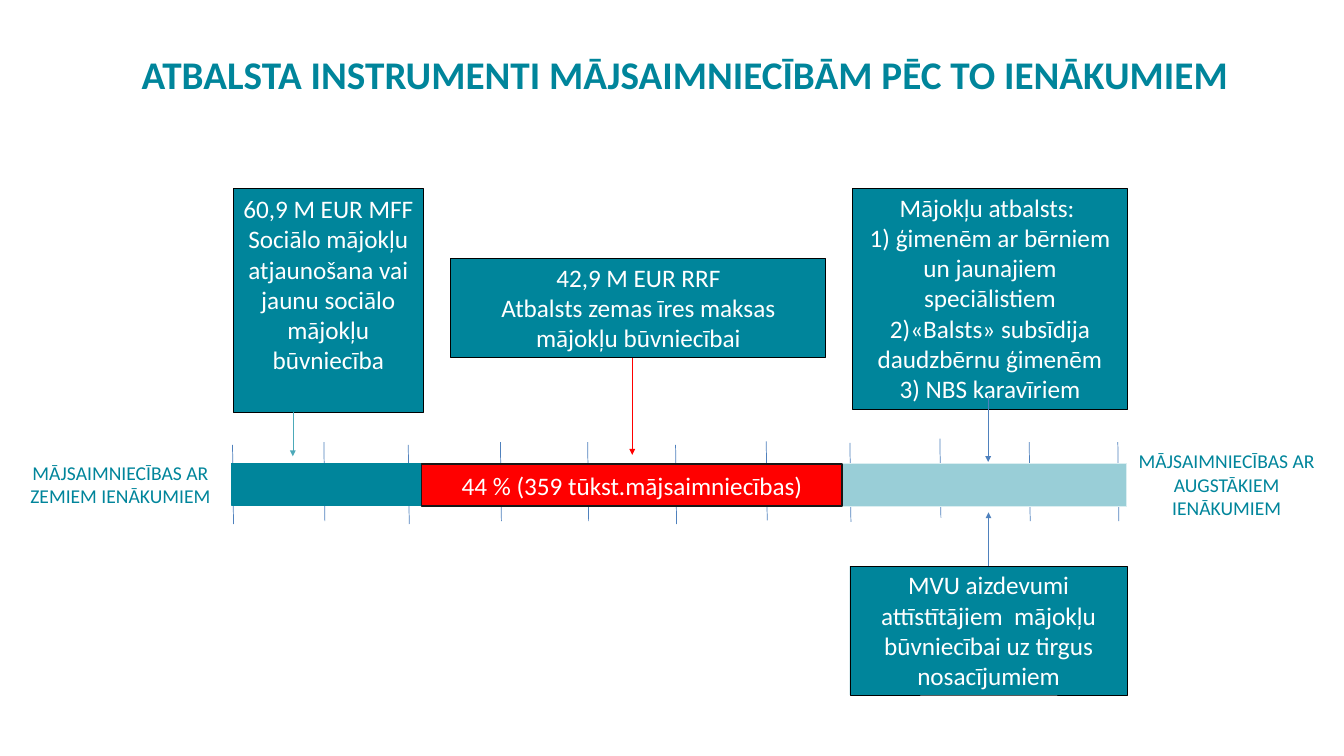
from dataclasses import dataclass
from typing import Any, NamedTuple, Optional

from lxml.etree import SubElement
from pptx import Presentation
from pptx.dml.color import RGBColor as RGB
from pptx.enum.shapes import MSO_CONNECTOR as CONN, MSO_SHAPE as SHAPE
from pptx.enum.text import MSO_ANCHOR as ANCHOR, PP_ALIGN as ALIGN
from pptx.oxml.ns import qn
from pptx.util import Pt


@dataclass(frozen=True)
class Theme:
    font: str = "Calibri"
    teal: str = "00859B"
    pale_teal: str = "99CED7"
    pale_edge: str = "DBEEF1"
    mid_teal: str = "4CA9B9"
    blue: str = "4F81BD"
    red: str = "FF0000"
    dark: str = "171717"
    black: str = "000000"
    white: str = "FFFFFF"
    title_size: float = 39.8
    label_size: float = 19.9
    box_size: float = 25.6


class Area(NamedTuple):
    x: float
    y: float
    w: float
    h: float


@dataclass(frozen=True)
class Block:
    area: Area
    fill: str
    edge: str
    edge_width: float
    lines: tuple[str, ...] = ()
    anchor: Any = ANCHOR.TOP
    inset: tuple[float, float] = (7.2, 3.6)


@dataclass(frozen=True)
class Label:
    area: Area
    text: str
    size: float
    bold: bool = False


@dataclass(frozen=True)
class Arrow:
    x: float
    start: float
    end: float
    color: str
    source: Optional[int] = None  # index of the box whose top side it leaves


T = Theme()

TITLE = Label(Area(95.8, 52.6, 1209.6, 50.4),
              "ATBALSTA INSTRUMENTI MĀJSAIMNIECĪBĀM PĒC TO IENĀKUMIEM ", T.title_size, True)
TITLE_SPACING = {"line_spacing": 0.9, "space_before": Pt(14.2), "space_after": Pt(8.5)}

AXIS_LABELS = [
    Label(Area(-2.2, 464.4, 249.1, 55.4), "MĀJSAIMNIECĪBAS AR ZEMIEM IENĀKUMIEM", T.label_size),
    Label(Area(1132.6, 452.9, 226.8, 79.9), "MĀJSAIMNIECĪBAS AR AUGSTĀKIEM IENĀKUMIEM",
          T.label_size),
]

# Left end and top of each scale tick
TICKS = [(236.2, 452.2), (329, 449.3), (414.7, 452.2), (508.3, 449.3), (596.9, 449.3),
         (686.2, 452.2), (778.3, 448.6), (863.3, 450), (954.7, 445.7), (1045.4, 449.3),
         (1135.4, 449.3)]
TICK_LEAN, TICK_HEIGHT = 1, 80.3

INCOME_BANDS = [
    Block(Area(235.4, 470.9, 192.2, 42.5), T.teal, T.teal, 1.5),
    Block(Area(854.6, 470.9, 289.4, 43.9), T.pale_teal, T.pale_edge, 1.5),
    Block(Area(428.4, 471.6, 427, 42.5), T.red, T.dark, 1.5,
          ("44 % (359 tūkst.mājsaimniecības)",), ANCHOR.MIDDLE),
]

SUPPORT_BOXES = [
    Block(Area(236.9, 191.5, 193, 227.5), T.teal, T.black, 0.75,
          ("60,9 M EUR MFF",
           "Sociālo mājokļu atjaunošana vai jaunu sociālo mājokļu būvniecība"),
          inset=(10.1, 5)),
    Block(Area(457.9, 262.8, 380.9, 100.1), T.teal, T.black, 0.75,
          ("42,9 M EUR RRF", "Atbalsts zemas īres maksas mājokļu būvniecībai")),
    Block(Area(866.2, 191.5, 278.6, 224.6), T.teal, T.black, 0.75,
          ("Mājokļu atbalsts: ", "1) ģimenēm ar bērniem un jaunajiem speciālistiem",
           "2)«Balsts» subsīdija daudzbērnu ģimenēm", "3) NBS karavīriem")),
    Block(Area(863.3, 575.3, 281.5, 131), T.teal, T.black, 0.75,
          ("MVU aizdevumi attīstītājiem  mājokļu būvniecībai uz tirgus nosacījumiem",)),
]

ARROWS = [
    Arrow(297.4, 419, 463.7, T.mid_teal),
    Arrow(642.2, 363.6, 462.2, T.red),
    Arrow(1003.7, 402.5, 469.4, T.blue),
    Arrow(1004.05, 575.3, 520.6, T.blue, source=3),
]


def set_all(obj: Any, values: dict[str, Any]) -> None:
    for name, value in values.items():
        setattr(obj, name, value)


def write(sp: Any, lines: tuple[str, ...], size: float, color: str, bold: bool = False,
          anchor: Any = ANCHOR.TOP, inset: tuple[float, float] = (7.2, 3.6)) -> Any:
    tf = sp.text_frame
    side, end = map(Pt, inset)
    set_all(tf, {"word_wrap": True, "vertical_anchor": anchor, "margin_left": side,
                 "margin_right": side, "margin_top": end, "margin_bottom": end})
    for i, line in enumerate(lines):
        p = tf.add_paragraph() if i else tf.paragraphs[0]
        p.alignment = ALIGN.CENTER
        r = p.add_run()
        r.text = line
        set_all(r.font, {"name": T.font, "size": Pt(size), "bold": bold})
        r.font.color.rgb = RGB.from_string(color)
    return tf


def add_label(s: Any, label: Label) -> Any:
    sp = s.shapes.add_textbox(*map(Pt, label.area))
    return write(sp, (label.text,), label.size, T.teal, label.bold)


def add_block(s: Any, block: Block) -> Any:
    sp = s.shapes.add_shape(SHAPE.RECTANGLE, *map(Pt, block.area))
    sp.shadow.inherit = False
    sp.fill.solid()
    sp.fill.fore_color.rgb = RGB.from_string(block.fill)
    sp.line.color.rgb = RGB.from_string(block.edge)
    sp.line.width = Pt(block.edge_width)
    if block.lines:
        write(sp, block.lines, T.box_size, T.white, anchor=block.anchor, inset=block.inset)
    return sp


def add_line(s: Any, x1: float, y1: float, x2: float, y2: float, color: str, width: float,
             arrowhead: bool = False) -> Any:
    line = s.shapes.add_connector(CONN.STRAIGHT, *map(Pt, (x1, y1, x2, y2)))
    line.line.color.rgb = RGB.from_string(color)
    line.line.width = Pt(width)
    if arrowhead:
        SubElement(line.line._get_or_add_ln(), qn("a:tailEnd"), type="triangle")
    SubElement(line._element.spPr, qn("a:effectLst"))
    return line


def main() -> None:
    prs = Presentation()
    set_all(prs, {"slide_width": Pt(1365.12), "slide_height": Pt(768.24)})
    s = prs.slides.add_slide(prs.slide_layouts[6])

    # Title
    set_all(add_label(s, TITLE).paragraphs[0], TITLE_SPACING)

    # Income scale: ticks behind the coloured bands
    for x, y in TICKS:
        add_line(s, x, y, x + TICK_LEAN, y + TICK_HEIGHT, T.blue, 0.75)
    for band in INCOME_BANDS:
        add_block(s, band)
    for label in AXIS_LABELS:
        add_label(s, label)

    # Support instruments and their arrows to the scale
    boxes = [add_block(s, box) for box in SUPPORT_BOXES]
    for a in ARROWS:
        line = add_line(s, a.x, a.start, a.x, a.end, a.color, 0.5, arrowhead=True)
        if a.source is not None:
            line.begin_connect(boxes[a.source], 0)

    prs.save("out.pptx")


if __name__ == "__main__":
    main()
